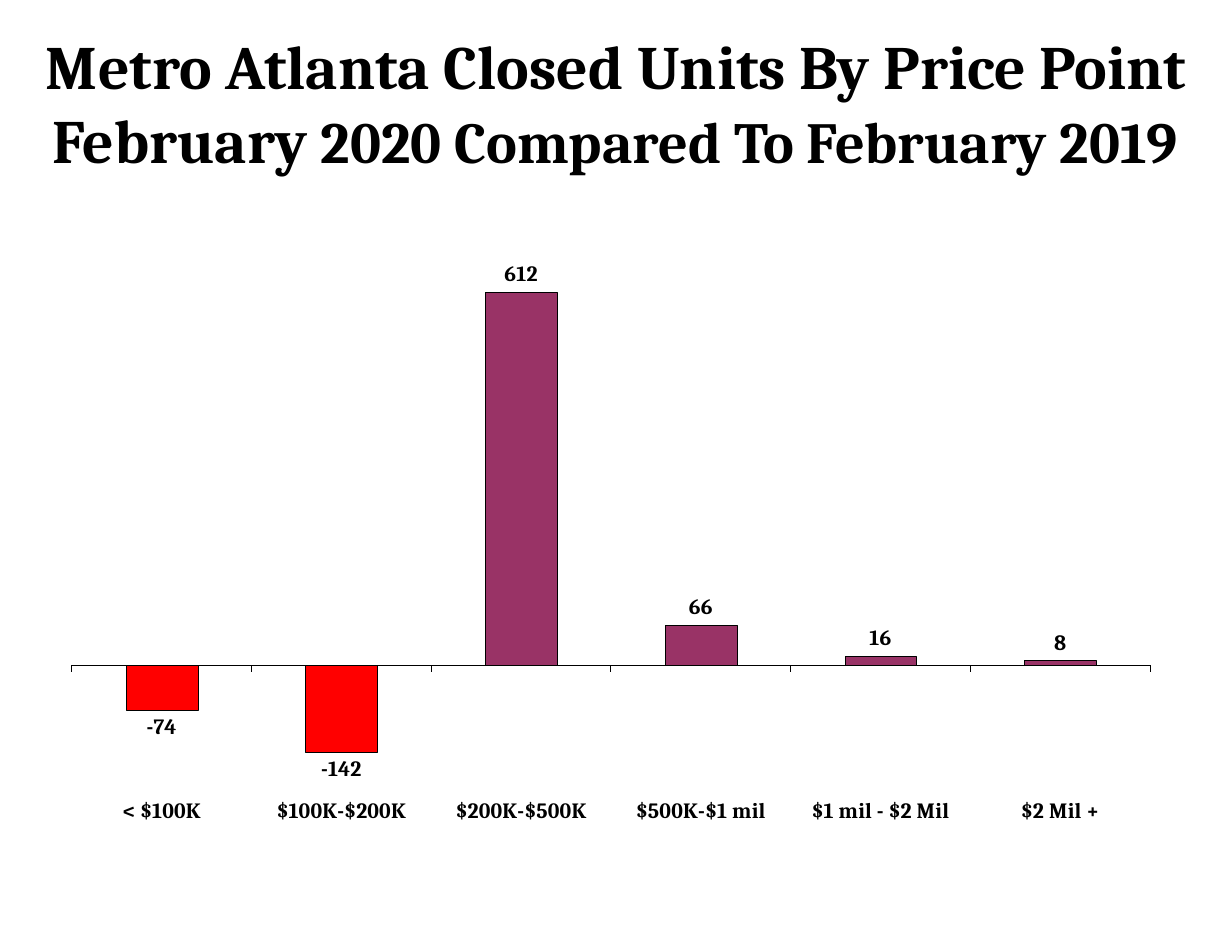
from lxml import etree
from pptx import Presentation
from pptx.chart.data import CategoryChartData
from pptx.dml.color import RGBColor
from pptx.enum.chart import XL_CHART_TYPE, XL_LABEL_POSITION, XL_TICK_LABEL_POSITION, XL_TICK_MARK
from pptx.enum.text import MSO_ANCHOR, PP_ALIGN
from pptx.oxml.ns import qn
from pptx.util import Cm, Pt

COLOURS = {"text": "000000", "gain": "993366", "loss": "FF0000"}
FONT = "Cambria"
UNIT_CHANGES = {
    "< $100K": -74,
    "$100K-$200K": -142,
    "$200K-$500K": 612,
    "$500K-$1 mil": 66,
    "$1 mil - $2 Mil": 16,
    "$2 Mil +": 8,
}
PLOT_AREA = {"x": 0, "y": 0.21, "w": 0.88, "h": 0.71}


def colour(name):
    return RGBColor.from_string(COLOURS[name])


def style_bar(bar, fill_name):
    bar.format.fill.solid()
    bar.format.fill.fore_color.rgb = colour(fill_name)
    bar.format.line.color.rgb = colour("text")
    bar.format.line.width = Pt(0.06)


deck = Presentation()
deck.slide_width, deck.slide_height = Cm(27.94), Cm(21.59)
page = deck.slides.add_slide(deck.slide_layouts[6])

# Chart
data = CategoryChartData(number_format="0")
data.categories = list(UNIT_CHANGES)
data.add_series("Series 1", list(UNIT_CHANGES.values()))
chart = page.shapes.add_chart(
    XL_CHART_TYPE.COLUMN_CLUSTERED, Cm(1.63), Cm(1.73), Cm(27.79), Cm(17.53), data
).chart
chart.has_legend = False
chart.has_title = False
chart.font.name = FONT
chart.font.size = Pt(14)
chart.font.bold = True
chart.font.color.rgb = colour("text")

price_axis = chart.category_axis
price_axis.tick_label_position = XL_TICK_LABEL_POSITION.LOW
price_axis.major_tick_mark = XL_TICK_MARK.OUTSIDE
price_axis.format.line.color.rgb = colour("text")
price_axis.format.line.width = Pt(0.01)

unit_axis = chart.value_axis
unit_axis.minimum_scale, unit_axis.maximum_scale = -200, 700
unit_axis.has_major_gridlines = False
unit_axis.visible = False

plot = chart.plots[0]
plot.gap_width = 150
plot.vary_by_categories = False
plot.has_data_labels = True
labels = plot.data_labels
labels.show_value = True
labels.number_format, labels.number_format_is_linked = "0", False
labels.position = XL_LABEL_POSITION.OUTSIDE_END

series = plot.series[0]
series.invert_if_negative = False
style_bar(series, "gain")
for index, change in enumerate(UNIT_CHANGES.values()):
    if change < 0:
        style_bar(series.points[index], "loss")

# Fixed inner plot area
plot_area = chart.element.chart.plotArea
layout = plot_area.find(qn("c:layout"))
if layout is None:
    layout = etree.Element(qn("c:layout"))
    plot_area.insert(0, layout)
manual = etree.SubElement(layout, qn("c:manualLayout"))
settings = {"layoutTarget": "inner", "xMode": "edge", "yMode": "edge", **PLOT_AREA}
for tag, value in settings.items():
    etree.SubElement(manual, qn(f"c:{tag}")).set("val", str(value))

# Title
box = page.shapes.add_textbox(0, Cm(1.73), Cm(27.94), Cm(1.17))
box.text_frame.word_wrap = True
box.text_frame.vertical_anchor = MSO_ANCHOR.MIDDLE
para = box.text_frame.paragraphs[0]
para.alignment = PP_ALIGN.CENTER
para.font.name = FONT
para.font.bold = True
para.font.color.rgb = colour("text")
for text, size in [
    ("Metro Atlanta Closed Units By Price Point\vFebruary ", 39.6),
    ("2020 Compared To February 2019", 37.4),
]:
    for number, line in enumerate(text.split("\v")):
        if number:
            para.add_line_break()
        span = para.add_run()
        span.text = line
        span.font.size = Pt(size)

deck.save("out.pptx")
